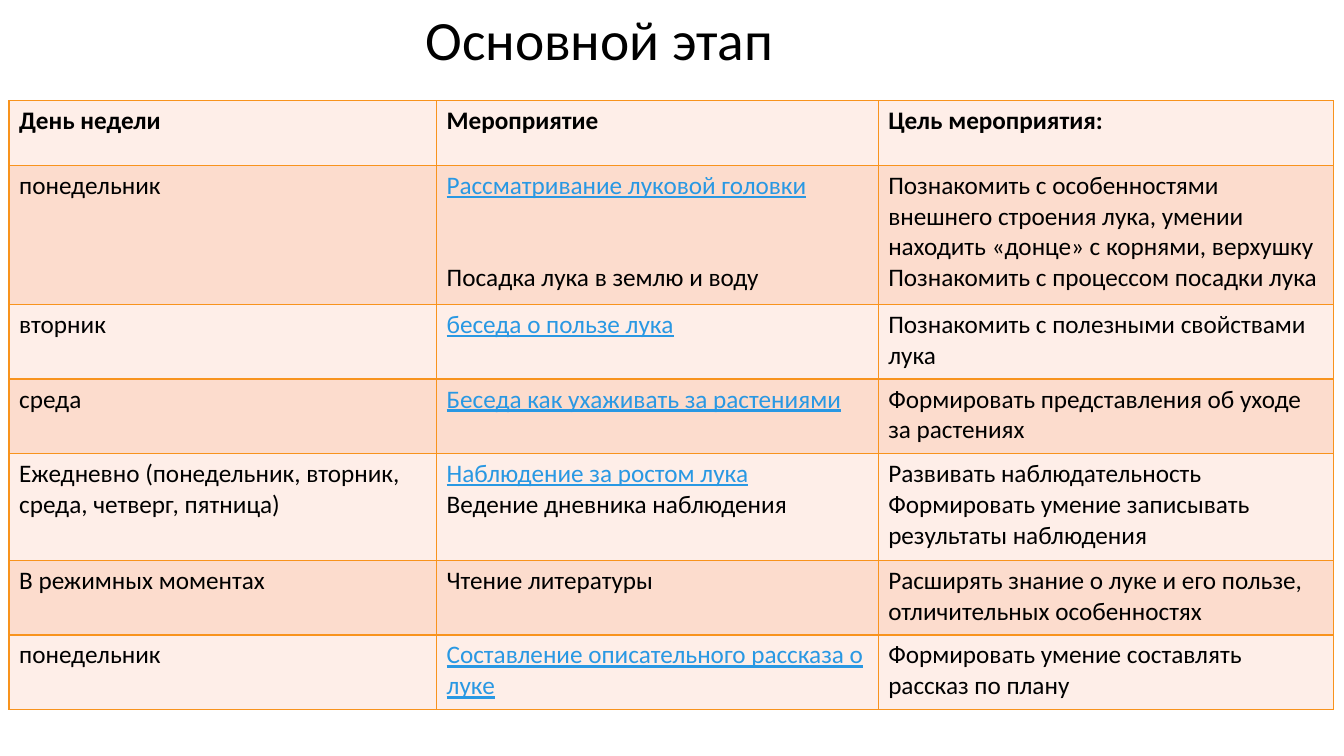
from dataclasses import dataclass

from lxml.etree import SubElement
from pptx import Presentation
from pptx.dml.color import RGBColor as RGB
from pptx.enum.text import MSO_ANCHOR as Anchor, PP_ALIGN as Align
from pptx.oxml.ns import qn
from pptx.table import _Cell as Cell
from pptx.util import Inches, Pt

COLORS = {
    "text": "000000",
    "link": "2998E3",
    "border": "F8931D",
    "light": "FEEEE8",
    "dark": "FCDCCD",
}
FONT = "Calibri"
COL_WIDTHS = (4.24, 4.38, 4.52)


@dataclass
class Line:
    text: str
    link: bool = False
    before: float = 0  # points


@dataclass
class Row:
    height: float
    day: str
    events: list[Line]
    goals: list[Line]


ROWS = [
    Row(0.64, "День недели", [Line("Мероприятие")], [Line("Цель мероприятия:")]),
    Row(1.38, "понедельник",
        [Line("Рассматривание луковой головки", link=True),
         Line("Посадка лука в землю и воду", before=44)],
        [Line("Познакомить с особенностями внешнего строения лука, умении "
              "находить «донце» с корнями, верхушку"),
         Line("Познакомить с процессом посадки лука")]),
    Row(0.74, "вторник",
        [Line("беседа о пользе лука", link=True)],
        [Line("Познакомить с полезными свойствами лука")]),
    Row(0.74, "среда",
        [Line("Беседа как ухаживать за растениями", link=True)],
        [Line("Формировать представления об уходе за растениях")]),
    Row(1.06, "Ежедневно (понедельник, вторник, среда, четверг, пятница)",
        [Line("Наблюдение за ростом лука", link=True),
         Line("Ведение дневника наблюдения")],
        [Line("Развивать наблюдательность"),
         Line("Формировать умение записывать результаты наблюдения")]),
    Row(0.74, "В режимных моментах",
        [Line("Чтение литературы")],
        [Line("Расширять знание о луке и его пользе, отличительных особенностях")]),
    Row(0.74, "понедельник",
        [Line("Составление описательного рассказа о луке", link=True)],
        [Line("Формировать умение составлять рассказ по плану")]),
]


def color(name: str) -> RGB:
    return RGB.from_string(COLORS[name])


def add_borders(cell: Cell) -> None:
    tc_pr = cell._tc.get_or_add_tcPr()
    for side in ("a:lnL", "a:lnR", "a:lnT", "a:lnB"):
        ln = SubElement(tc_pr, qn(side), w=str(Pt(1)))
        fill = SubElement(ln, qn("a:solidFill"))
        SubElement(fill, qn("a:srgbClr"), val=COLORS["border"])


def fill_cell(cell: Cell, lines: list[Line], fill: str, bold: bool) -> None:
    add_borders(cell)
    cell.fill.solid()
    cell.fill.fore_color.rgb = color(fill)
    tf = cell.text_frame
    for i, line in enumerate(lines):
        p = tf.add_paragraph() if i else tf.paragraphs[0]
        r = p.add_run()
        r.text = line.text
        if line.before:
            p.space_before = Pt(line.before)
        f = r.font
        f.name, f.size, f.bold = FONT, Pt(18), bold
        f.underline = line.link
        f.color.rgb = color("link" if line.link else "text")


def main() -> None:
    prs = Presentation()
    prs.slide_width, prs.slide_height = Inches(13.33), Inches(7.5)
    s = prs.slides.add_slide(prs.slide_layouts[5])

    # Title, indented from the left
    title = s.shapes.title
    title.left, title.top = Inches(0.92), Inches(0.14)
    title.width, title.height = Inches(11.5), Inches(0.57)
    tf = title.text_frame
    tf.text = "Основной этап"
    tf.vertical_anchor = Anchor.MIDDLE
    p = tf.paragraphs[0]
    p.alignment, p.line_spacing = Align.LEFT, 0.9
    p._p.get_or_add_pPr().set("marL", str(Inches(3.2)))
    p.font.name, p.font.size = FONT, Pt(39.6)
    p.font.color.rgb = color("text")

    # Weekly plan table
    height = sum(row.height for row in ROWS)
    table = s.shapes.add_table(
        len(ROWS), len(COL_WIDTHS), Inches(0.09), Inches(1),
        Inches(sum(COL_WIDTHS)), Inches(height)).table
    table.first_row = table.horz_banding = False
    for col, width in zip(table.columns, COL_WIDTHS):
        col.width = Inches(width)
    for i, row in enumerate(ROWS):
        table.rows[i].height = Inches(row.height)
        fill = "dark" if i % 2 else "light"
        for j, lines in enumerate(([Line(row.day)], row.events, row.goals)):
            fill_cell(table.cell(i, j), lines, fill, bold=i == 0)

    prs.save("out.pptx")


if __name__ == "__main__":
    main()
